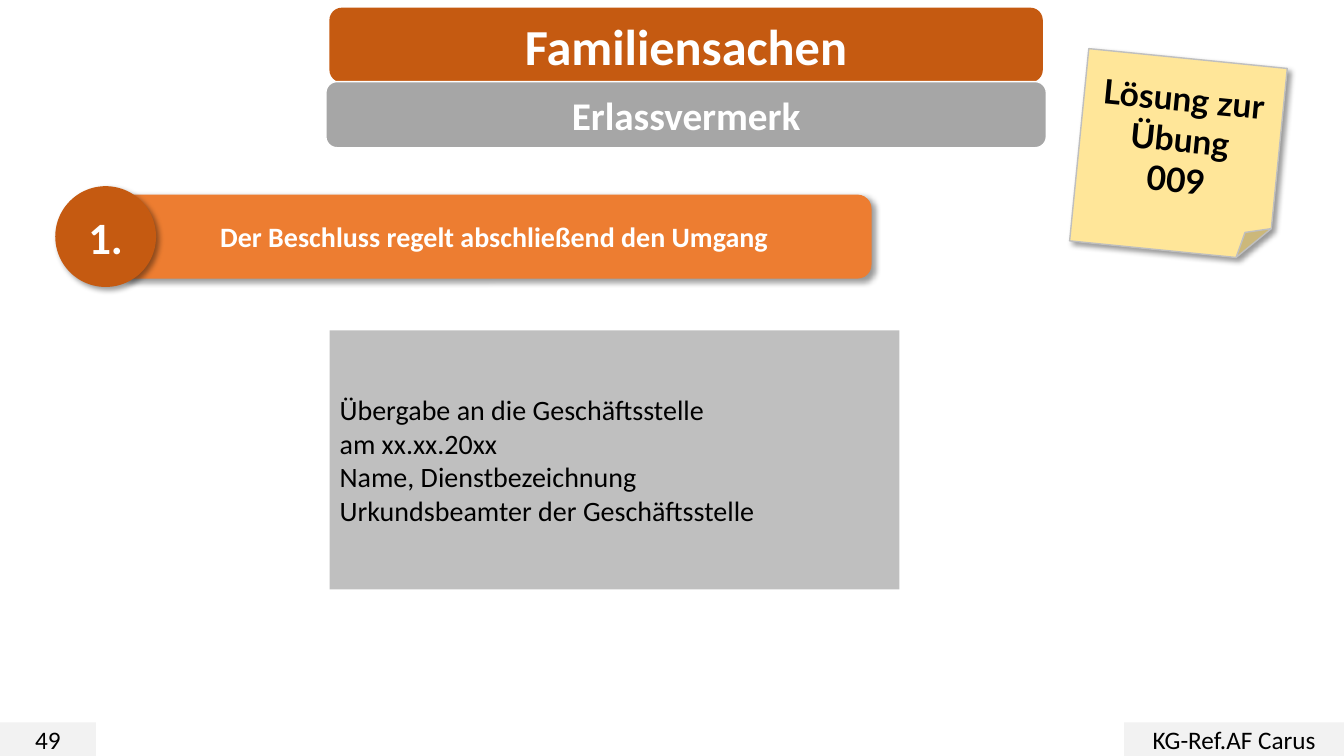
from lxml.etree import SubElement
from pptx import Presentation
from pptx.dml.color import RGBColor
from pptx.enum.shapes import MSO_SHAPE
from pptx.enum.text import MSO_ANCHOR, MSO_AUTO_SIZE, PP_ALIGN
from pptx.oxml.ns import qn
from pptx.util import Pt

BLACK = RGBColor(0x00, 0x00, 0x00)
WHITE = RGBColor(0xFF, 0xFF, 0xFF)
RUST = RGBColor(0xC5, 0x5A, 0x11)
ORANGE = RGBColor(0xED, 0x7D, 0x31)
YELLOW = RGBColor(0xFF, 0xE6, 0x99)
SILVER = RGBColor(0xBF, 0xBF, 0xBF)
GREY = RGBColor(0xA6, 0xA6, 0xA6)
PALE = RGBColor(0xF2, 0xF2, 0xF2)

PAGE_WIDTH, PAGE_HEIGHT = 960, 540


def place(shape, box):
    for name, value in zip(("left", "top", "width", "height"), box):
        setattr(shape, name, Pt(value))


def write(shape, lines, size, color=BLACK, bold=False, font="Calibri", align=PP_ALIGN.CENTER):
    frame = shape.text_frame
    frame.word_wrap = True
    frame.auto_size = MSO_AUTO_SIZE.NONE
    frame.vertical_anchor = MSO_ANCHOR.MIDDLE
    frame.text = "\n".join(lines)
    for para in frame.paragraphs:
        para.alignment = align
        for span in para.runs:
            span.font.color.rgb = color
            for name, value in {"name": font, "size": Pt(size), "bold": bold}.items():
                setattr(span.font, name, value)


def add_panel(shapes, kind, box, fill, line=None):
    panel = shapes.add_shape(kind, *map(Pt, box))
    panel.shadow.inherit = False
    panel.fill.solid()
    panel.fill.fore_color.rgb = fill
    if line is None:
        panel.line.fill.background()
    else:
        panel.line.color.rgb = line
        panel.line.width = Pt(1)
    return panel


def add_shadow(shape):
    effects = shape.element.spPr.find(qn("a:effectLst"))
    shadow = SubElement(effects, qn("a:outerShdw"), blurRad=str(Pt(4)), dist=str(Pt(3)),
                        dir="2700000", algn="tl", rotWithShape="0")
    color = SubElement(shadow, qn("a:srgbClr"), val=str(BLACK))
    SubElement(color, qn("a:alpha"), val="40000")


def add_header(page, box, title_text, subtitle_text):
    left, top, width, height = box
    title_box = (left + 2.5, top, width - 5, 53.3)
    title_bar = add_panel(page.shapes, MSO_SHAPE.ROUNDED_RECTANGLE, title_box, RUST)
    # The title sits directly on its bar
    title = page.shapes.title
    title_bar.element.addnext(title.element)
    place(title, title_box)
    write(title, [title_text], 36, WHITE, bold=True)
    # Subtitle bar
    subtitle_top = top + 52.8
    subtitle = add_panel(page.shapes, MSO_SHAPE.ROUNDED_RECTANGLE,
                         (left, subtitle_top, width, top + height - subtitle_top), GREY, WHITE)
    write(subtitle, [subtitle_text], 28, WHITE, bold=True)


def add_sticky_note(page, box, lines):
    note = add_panel(page.shapes, MSO_SHAPE.FOLDED_CORNER, box, YELLOW, SILVER)
    add_shadow(note)
    note.rotation = 5.7
    write(note, lines, 24, bold=True, font="Lato")


def add_numbered_point(page, box, number, text):
    left, top, width, height = box
    group = page.shapes.add_group_shape()
    # Bar starts behind the circle, which is as tall as the box
    bar_left, bar_inset = 44, 6
    bar = add_panel(group.shapes, MSO_SHAPE.ROUNDED_RECTANGLE,
                    (left + bar_left, top + bar_inset, width - bar_left, height - 2 * bar_inset),
                    ORANGE)
    write(bar, [text], 20, WHITE, bold=True)
    circle = add_panel(group.shapes, MSO_SHAPE.OVAL, (left, top, height, height), RUST)
    write(circle, [number], 32, WHITE, bold=True)
    for part in (bar, circle):
        add_shadow(part)


def add_sample(page, box, lines):
    sample = add_panel(page.shapes, MSO_SHAPE.RECTANGLE, box, SILVER)
    write(sample, lines, 20, align=PP_ALIGN.LEFT)


def add_footer(page, box, number, author):
    left, top, width, height = box
    number_width, author_width = 68.5, 157
    for tag_left, tag_width, text in ((left, number_width, number),
                                      (left + width - author_width, author_width, author)):
        tag = add_panel(page.shapes, MSO_SHAPE.RECTANGLE, (tag_left, top, tag_width, height), PALE)
        write(tag, [text], 18)


def main():
    deck = Presentation()
    deck.slide_width, deck.slide_height = Pt(PAGE_WIDTH), Pt(PAGE_HEIGHT)
    page = deck.slides.add_slide(deck.slide_layouts[5])

    add_header(page, (232.8, 5.5, 514.6, 100), "Familiensachen", "Erlassvermerk")
    add_footer(page, (0, 516, PAGE_WIDTH, 24), "49", "KG-Ref.AF Carus")
    add_sticky_note(page, (770.5, 41.5, 142.5, 138), ["Lösung zur", "Übung", "009"])
    add_sample(page, (235.5, 236, 407, 185), [
        "Übergabe an die Geschäftsstelle",
        "am xx.xx.20xx",
        "Name, Dienstbezeichnung",
        "Urkundsbeamter der Geschäftsstelle",
    ])
    add_numbered_point(page, (39.5, 133, 583, 72), "1.",
                       "Der Beschluss regelt abschließend den Umgang")
    deck.save("out.pptx")


if __name__ == "__main__":
    main()
